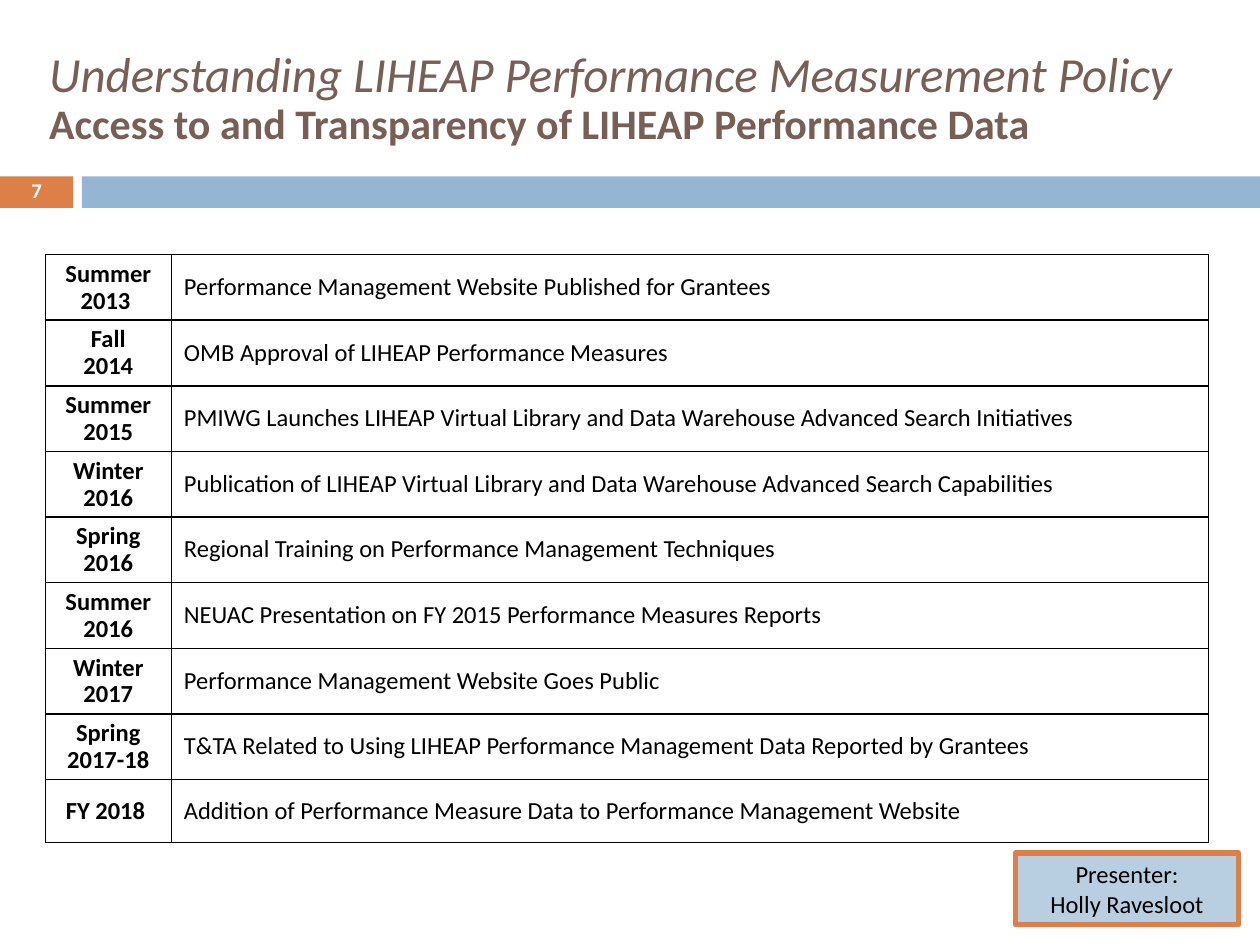
from lxml import etree
from pptx import Presentation
from pptx.dml.color import RGBColor
from pptx.enum.shapes import MSO_SHAPE
from pptx.enum.text import MSO_ANCHOR, PP_ALIGN
from pptx.oxml.ns import qn
from pptx.util import Inches, Pt

RECTANGLE = MSO_SHAPE.RECTANGLE
MIDDLE = MSO_ANCHOR.MIDDLE
LEFT, CENTER = PP_ALIGN.LEFT, PP_ALIGN.CENTER
FONT = "Calibri"
COLORS = {
    "title": "775F55",
    "orange": "DD8047",
    "blue": "94B6D2",
    "white": "FFFFFF",
    "black": "000000",
}

TITLE = "Understanding LIHEAP Performance Measurement Policy"
SUBTITLE = "Access to and Transparency of LIHEAP Performance Data"
SLIDE_NUMBER = "7"
PRESENTER = "Presenter:\nHolly Ravesloot"
MILESTONES = [
    ("Summer\n2013 ", "Performance Management Website Published for Grantees"),
    ("Fall\n2014", "OMB Approval of LIHEAP Performance Measures"),
    ("Summer\n2015", "PMIWG Launches LIHEAP Virtual Library and Data Warehouse Advanced Search Initiatives"),
    ("Winter\n2016", "Publication of LIHEAP Virtual Library and Data Warehouse Advanced Search Capabilities"),
    ("Spring 2016", "Regional Training on Performance Management Techniques"),
    ("Summer\n2016", "NEUAC Presentation on FY 2015 Performance Measures Reports"),
    ("Winter\n2017", "Performance Management Website Goes Public"),
    ("Spring 2017-18", "T&TA Related to Using LIHEAP Performance Management Data Reported by Grantees"),
    ("FY 2018 ", "Addition of Performance Measure Data to Performance Management Website"),
]
COLUMN_WIDTHS = (1, 8.23)
ROW_HEIGHT = 0.5


def color(name):
    return RGBColor.from_string(COLORS[name])


def style_font(font, size, color_name, bold=False, italic=False):
    font.name = FONT
    font.size = Pt(size)
    font.bold = bold
    font.italic = italic
    font.color.rgb = color(color_name)


def write_text(text_frame, text, size, color_name, bold=False, alignment=CENTER, spacing=1.0):
    text_frame.text = text
    text_frame.word_wrap = True
    for paragraph in text_frame.paragraphs:
        paragraph.alignment = alignment
        paragraph.line_spacing = spacing
        for run in paragraph.runs:
            style_font(run.font, size, color_name, bold)


def add_rectangle(slide, left, top, width, height, fill):
    shape = slide.shapes.add_shape(
        RECTANGLE, Inches(left), Inches(top), Inches(width), Inches(height))
    shape.shadow.inherit = False
    shape.fill.solid()
    shape.fill.fore_color.rgb = color(fill)
    shape.line.fill.background()
    return shape


def add_borders(cell):
    properties = cell._tc.get_or_add_tcPr()
    for position, side in enumerate(("lnL", "lnR", "lnT", "lnB")):
        line = etree.Element(qn(f"a:{side}"), w=str(Pt(1)))
        fill = etree.SubElement(line, qn("a:solidFill"))
        etree.SubElement(fill, qn("a:srgbClr"), val=COLORS["black"])
        properties.insert(position, line)


def add_title(slide):
    title = slide.shapes.title
    title.left, title.top = Inches(0.29), Inches(0.25)
    title.width, title.height = Inches(9.3), Inches(1.08)
    title.text_frame.text = f"{TITLE}\v{SUBTITLE}"
    title.text_frame.word_wrap = True
    title.text_frame.vertical_anchor = MIDDLE
    paragraph = title.text_frame.paragraphs[0]
    paragraph.alignment = LEFT
    paragraph.line_spacing = 0.9
    heading, subheading = paragraph.runs
    style_font(heading.font, 28, "title", italic=True)
    style_font(subheading.font, 24, "title", bold=True)


def add_slide_number(slide):
    box = slide.shapes.add_textbox(Inches(0), Inches(1.39), Inches(0.58), Inches(0.27))
    frame = box.text_frame
    frame.margin_top = frame.margin_bottom = 0
    frame.vertical_anchor = MIDDLE
    write_text(frame, SLIDE_NUMBER, 11.9, "white", bold=True, spacing=0.8)


def add_timeline(slide):
    table = slide.shapes.add_table(
        len(MILESTONES), len(COLUMN_WIDTHS), Inches(0.36), Inches(2.02),
        Inches(sum(COLUMN_WIDTHS)), Inches(ROW_HEIGHT * len(MILESTONES))).table
    table.first_row = False
    table.horz_banding = False
    for column, width in zip(table.columns, COLUMN_WIDTHS):
        column.width = Inches(width)
    for row, milestone in zip(table.rows, MILESTONES):
        row.height = Inches(ROW_HEIGHT)
        for index, (cell, text) in enumerate(zip(row.cells, milestone)):
            is_date = index == 0
            write_text(cell.text_frame, text, 14, "black", bold=is_date,
                       alignment=CENTER if is_date else LEFT, spacing=0.9)
            cell.vertical_anchor = MIDDLE
            cell.fill.background()
            add_borders(cell)


def add_presenter(slide):
    box = add_rectangle(slide, 8.06, 6.77, 1.77, 0.57, "blue")
    fill_color = box._element.spPr.find(qn("a:solidFill"))[0]
    etree.SubElement(fill_color, qn("a:alpha"), val="66000")
    box.line.color.rgb = color("orange")
    box.line.width = Pt(3)
    write_text(box.text_frame, PRESENTER, 14, "black")


def main():
    presentation = Presentation()
    presentation.slide_width, presentation.slide_height = Inches(10), Inches(7.5)
    slide = presentation.slides.add_slide(presentation.slide_layouts[5])
    add_rectangle(slide, 0, 1.4, 0.58, 0.25, "orange")
    add_rectangle(slide, 0.65, 1.4, 9.35, 0.25, "blue")
    add_title(slide)
    add_slide_number(slide)
    add_presenter(slide)
    add_timeline(slide)
    presentation.save("out.pptx")


if __name__ == "__main__":
    main()
